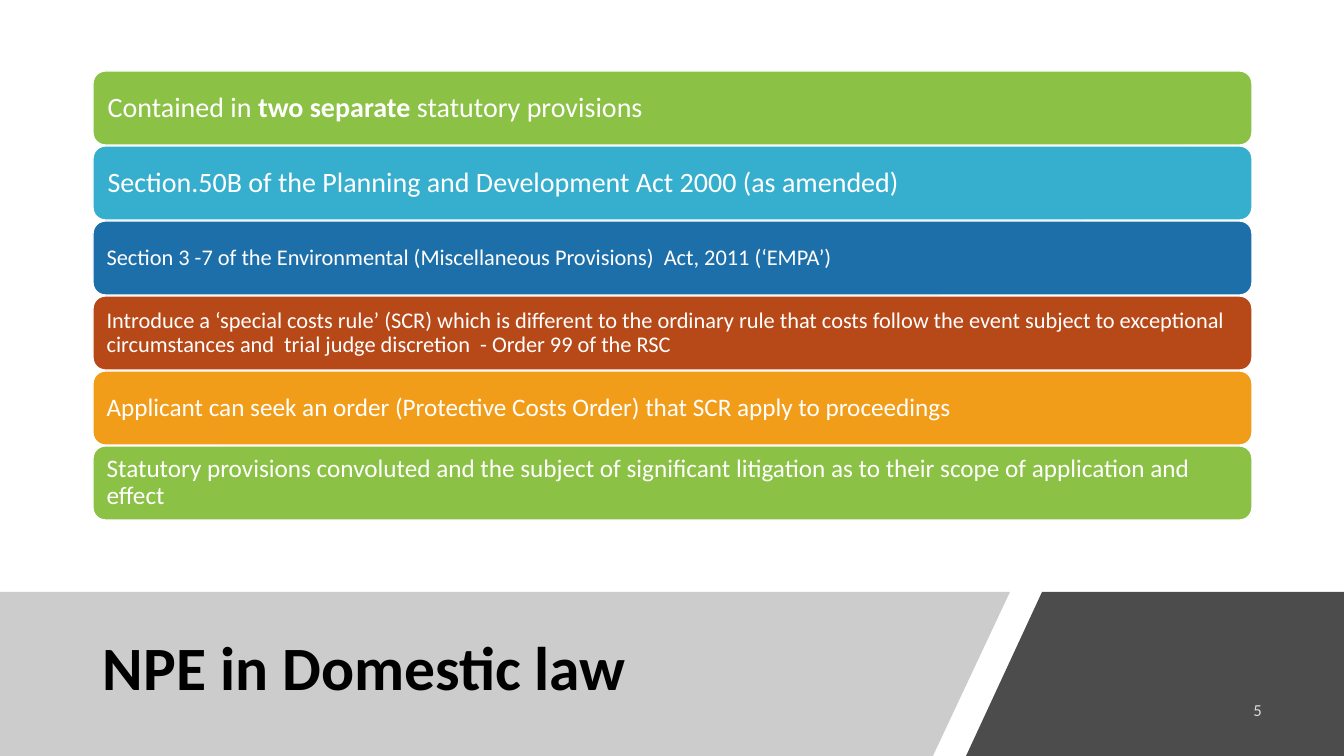
"""Build the slide on NPE in domestic law."""
from dataclasses import dataclass

from lxml.etree import SubElement
from pptx import Presentation
from pptx.dml.color import RGBColor
from pptx.enum.shapes import MSO_SHAPE as SHAPE
from pptx.enum.text import MSO_ANCHOR as ANCHOR, MSO_AUTO_SIZE as AUTO, PP_ALIGN as ALIGN
from pptx.oxml.ns import qn
from pptx.util import Pt

SCALE = 12192000 / 1344


@dataclass(frozen=True)
class Theme:
    """Hold the colours and type sizes."""
    font: str = "Calibri"
    white: str = "FFFFFF"
    black: str = "000000"
    grey: str = "808080"
    green: str = "8BC145"
    cyan: str = "36AFCE"
    blue: str = "1D6FA9"
    rust: str = "B74919"
    orange: str = "F19D19"
    title: int = 44
    large: int = 20
    medium: int = 18
    small: int = 16
    number: int = 12


T = Theme()
BAR_LEFT, BAR_TOP, BAR_WIDTH, BAR_HEIGHT, BAR_PITCH = 93, 71, 1159, 74, 75
BARS = [
    (T.green, T.large, [("Contained in ", False), ("two separate ", True),
                        ("statutory provisions", False)]),
    (T.cyan, T.large, [("Section.50B of the Planning and Development Act 2000 (as amended)", False)]),
    (T.blue, T.small, [("Section 3 -7 of the Environmental (Miscellaneous Provisions)  Act, 2011 "
                        "(‘EMPA’)", False)]),
    (T.rust, T.small, [("Introduce a ‘special costs rule’ (SCR) which is different to the ordinary "
                        "rule that costs follow the event subject to exceptional circumstances and  "
                        "trial judge discretion  - Order 99 of the RSC", False)]),
    (T.orange, T.medium, [("Applicant can seek an order (Protective Costs Order) that SCR apply to "
                           "proceedings", False)]),
    (T.green, T.medium, [("Statutory provisions convoluted and the subject of significant litigation "
                          "as to their scope of application and effect", False)]),
]


def px(n):
    """Turn px into EMU."""
    return round(n * SCALE)


def paint(fill, color, alpha=100):
    """Set a solid fill with an opacity in percent."""
    fill.solid()
    fill.fore_color.rgb = RGBColor.from_string(color)
    if alpha < 100:
        clr = fill._xPr.find(qn("a:solidFill"))[0]
        SubElement(clr, qn("a:alpha"), val=str(alpha * 1000))


def write(sp, runs, size, color, align=ALIGN.LEFT, alpha=100, inset=(10, 5), spacing=0.9):
    """Write one paragraph of (text, bold) runs into a shape."""
    tf = sp.text_frame
    tf.word_wrap = True
    tf.auto_size = AUTO.NONE
    tf.vertical_anchor = ANCHOR.MIDDLE
    tf.margin_left = tf.margin_right = px(inset[0])
    tf.margin_top = tf.margin_bottom = px(inset[1])
    p = tf.paragraphs[0]
    p.alignment = align
    p.line_spacing = spacing
    for text, bold in runs:
        r = p.add_run()
        r.text = text
        r.font.name = T.font
        r.font.size = Pt(size)
        r.font.bold = bold
        paint(r.font.fill, color, alpha)


def add_panel(s, points, color, alpha):
    """Add a translucent outline behind the title."""
    builder = s.shapes.build_freeform(*points[0], scale=SCALE)
    builder.add_line_segments(points[1:], close=True)
    sp = builder.convert_to_shape()
    sp.shadow.inherit = False
    sp.line.fill.background()
    paint(sp.fill, color, alpha)
    s.shapes.title._element.addprevious(sp._element)


def add_title(s, text):
    """Place and fill the title placeholder."""
    sp = s.shapes.title
    sp.left, sp.top, sp.width, sp.height = map(px, (93, 610, 851, 121))
    write(sp, [(text, True)], T.title, T.black)


def add_number(s, text):
    """Add the slide number."""
    sp = s.shapes.add_textbox(*map(px, (1124, 690, 148, 40)))
    write(sp, [(text, False)], T.number, T.white, ALIGN.RIGHT, alpha=80, spacing=1.0)


def add_bar(s, i, color, size, runs):
    """Add the rounded bar in row i."""
    top = BAR_TOP + i * BAR_PITCH
    sp = s.shapes.add_shape(SHAPE.ROUNDED_RECTANGLE,
                            *map(px, (BAR_LEFT, top, BAR_WIDTH, BAR_HEIGHT)))
    sp.shadow.inherit = False
    paint(sp.fill, color)
    paint(sp.line.fill, T.white)
    sp.line.width = Pt(1)
    inset = 11 if size == T.large else 10
    write(sp, runs, size, T.white, inset=(inset, inset))


def main():
    """Build and save the slide."""
    prs = Presentation()
    prs.slide_width, prs.slide_height = px(1344), px(756)
    s = prs.slides.add_slide(prs.slide_layouts[5])
    add_panel(s, [(0, 592), (1010, 592), (933, 756), (0, 756)], T.grey, 40)
    add_panel(s, [(1042, 592), (1344, 592), (1344, 756), (966, 756)], T.black, 70)
    add_title(s, "NPE in Domestic law")
    add_number(s, "5")
    for i, (color, size, runs) in enumerate(BARS):
        add_bar(s, i, color, size, runs)
    prs.save("out.pptx")


if __name__ == "__main__":
    main()
